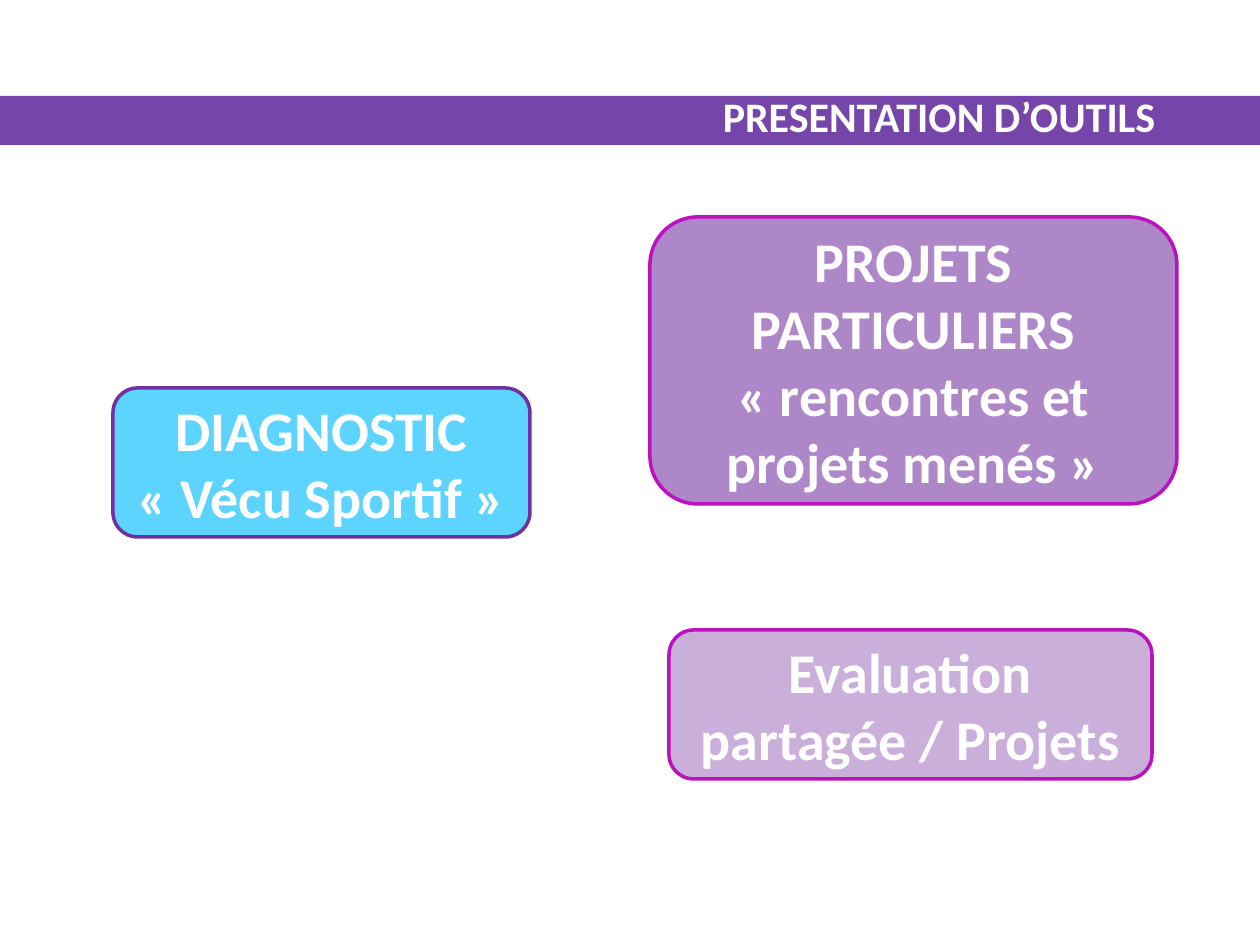
"""Build a slide presenting three assessment tools under a title band."""

import dataclasses

import pptx
import pptx.dml.color
import pptx.enum.shapes
import pptx.enum.text
import pptx.util

PX_PER_INCH = 126
COLORS = {
    "band": "7545A9",
    "white": "FFFFFF",
    "cyan": "5DD4FF",
    "violet": "7030A0",
    "purple": "AE87C8",
    "lilac": "C9AFDA",
    "magenta": "BC12BD",
}
ALIGN = pptx.enum.text.PP_ALIGN
ANCHOR = pptx.enum.text.MSO_ANCHOR
SHAPE = pptx.enum.shapes.MSO_SHAPE


@dataclasses.dataclass(frozen=True)
class Area:
    left: int
    top: int
    width: int
    height: int

    def emu(self) -> list[int]:
        return [px(value) for value in dataclasses.astuple(self)]


@dataclasses.dataclass(frozen=True)
class Tool:
    area: Area
    fill: str
    outline: str
    lines: tuple[str, ...]


TOOLS = (
    Tool(Area(113, 388, 417, 149), "cyan", "violet",
         ("DIAGNOSTIC", "« Vécu Sportif »")),
    Tool(Area(650, 217, 527, 287), "purple", "magenta",
         ("PROJETS PARTICULIERS", "« rencontres et projets menés »")),
    Tool(Area(669, 630, 483, 149), "lilac", "magenta",
         ("Evaluation partagée / Projets",)),
)


def px(value: int) -> int:
    return round(value * pptx.util.Inches(1) / PX_PER_INCH)


def color(name: str) -> pptx.dml.color.RGBColor:
    return pptx.dml.color.RGBColor.from_string(COLORS[name])


def write_text(box, lines: tuple[str, ...], *, size: int, align, anchor) -> None:
    frame = box.text_frame
    frame.word_wrap = True
    frame.vertical_anchor = anchor
    for index, line in enumerate(lines):
        para = frame.add_paragraph() if index else frame.paragraphs[0]
        para.alignment = align
        span = para.add_run()
        span.text = line
        span.font.name = "Calibri"
        span.font.size = pptx.util.Pt(size)
        span.font.bold = True
        span.font.color.rgb = color("white")


def add_panel(page, kind, area: Area, fill: str, outline: str | None = None):
    box = page.shapes.add_shape(kind, *area.emu())
    box.shadow.inherit = False
    box.fill.solid()
    box.fill.fore_color.rgb = color(fill)
    if outline:
        box.line.color.rgb = color(outline)
        box.line.width = pptx.util.Pt(2)
    else:
        box.line.fill.background()
    return box


def add_tool(page, tool: Tool) -> None:
    box = add_panel(page, SHAPE.ROUNDED_RECTANGLE, tool.area, tool.fill, tool.outline)
    write_text(box, tool.lines, size=32, align=ALIGN.CENTER, anchor=ANCHOR.MIDDLE)


def main() -> None:
    deck = pptx.Presentation()
    deck.slide_width, deck.slide_height = px(1260), px(945)
    page = deck.slides.add_slide(deck.slide_layouts[6])
    add_panel(page, SHAPE.RECTANGLE, Area(0, 96, 1260, 49), "band")
    title = page.shapes.add_textbox(*Area(223, 35, 945, 112).emu())
    write_text(title, ("PRESENTATION D’OUTILS",), size=24,
               align=ALIGN.RIGHT, anchor=ANCHOR.BOTTOM)
    for tool in TOOLS:
        add_tool(page, tool)
    deck.save("out.pptx")


if __name__ == "__main__":
    main()
